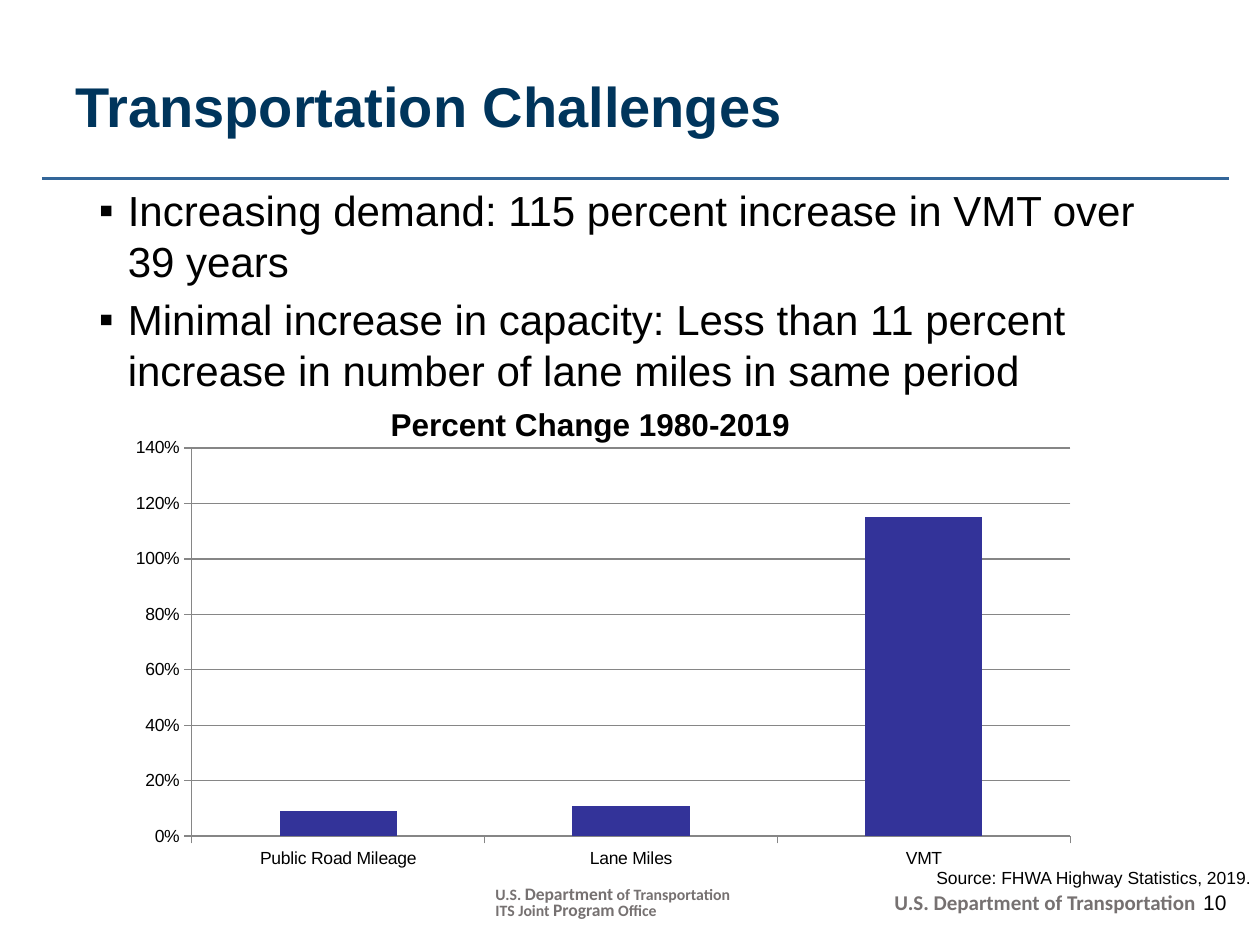
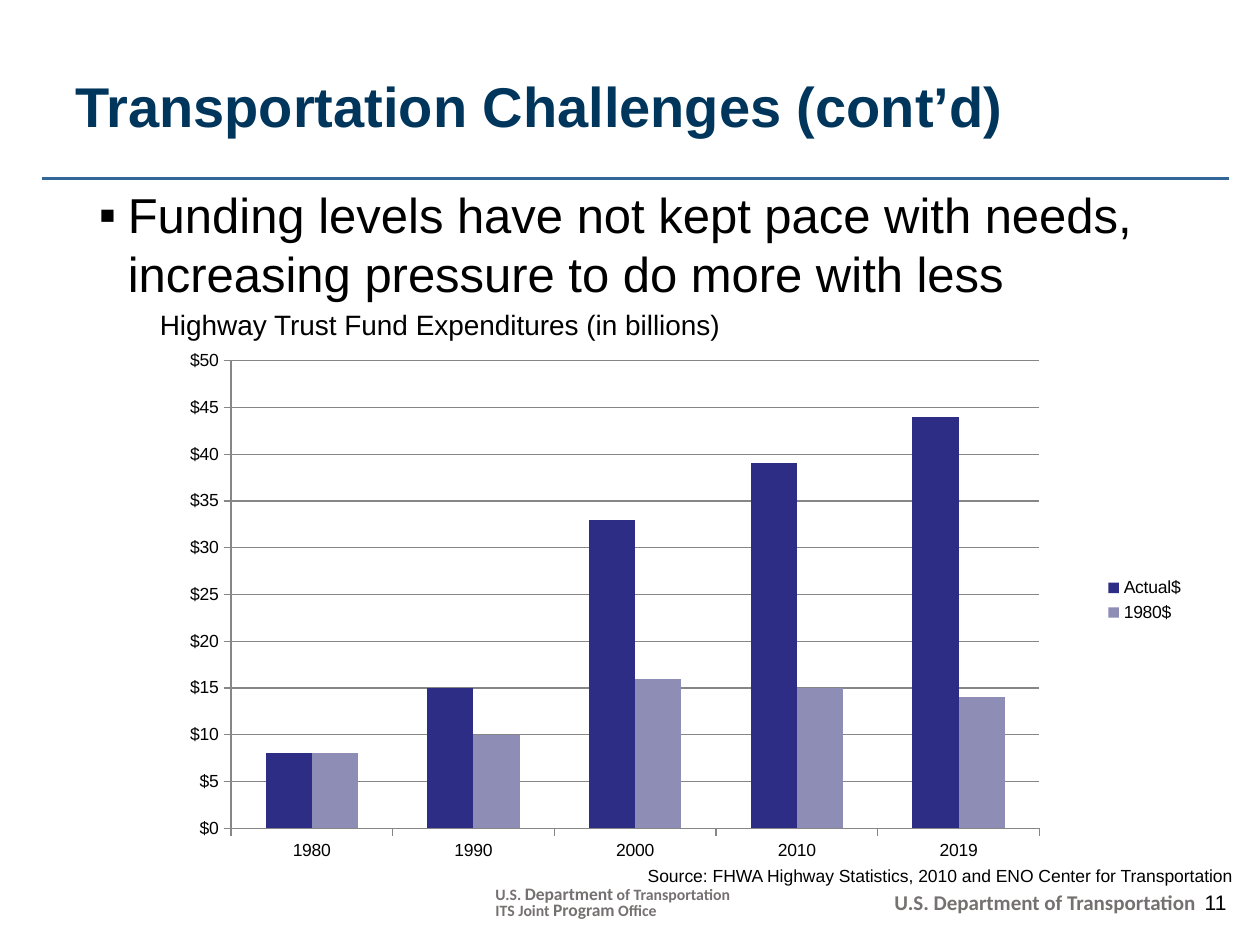
from lxml import etree
from pptx import Presentation
from pptx import util as u
from pptx.chart import data as chart_data
from pptx.dml.color import RGBColor
from pptx.enum import chart as ch, shapes, text
from pptx.oxml import parse_xml
from pptx.oxml.ns import nsdecls, qn

COLORS = {
    "title": "00355C", "rule": "336699", "footer": "767171", "ink": "000000",
    "paper": "FFFFFF", "grid": "868686",
    "demand": "333399", "actual": "2D2D86", "constant": "8D8DB6",
}
AGENCY = [("U.S. ", 9), ("Department", 10), (" of Transportation", 9)]
OFFICE = [("ITS Joint ", 9), ("Program", 10), (" Office", 9)]


def rgb(name):
    return RGBColor.from_string(COLORS[name])


def style(font, size, color="ink", bold=False, face="Arial"):
    font.name, font.size, font.bold = face, u.Pt(size), bold
    font.color.rgb = rgb(color)


def manual_layout(x, y, w=None, h=None):
    """Chart layout in fractions of the chart; with a size it places the inner plot."""
    places = [("xMode", "edge"), ("yMode", "edge"), ("x", x), ("y", y)]
    if w:
        places = [("layoutTarget", "inner")] + places + [("w", w), ("h", h)]
    layout = parse_xml(f"<c:layout {nsdecls('c')}><c:manualLayout/></c:layout>")
    for tag, value in places:
        etree.SubElement(layout[0], qn(f"c:{tag}")).set("val", str(value))
    return layout


class Deck:
    def __init__(self):
        self.prs = Presentation()
        self.prs.slide_width, self.prs.slide_height = u.Pt(720), u.Pt(540)
        self.slide = None

    def add_slide(self, title, number):
        self.slide = self.prs.slides.add_slide(self.prs.slide_layouts[6])
        self.slide.background.fill.solid()
        self.slide.background.fill.fore_color.rgb = rgb("paper")
        self.rule(24, 702, 102)
        self.label(str(number), (678, 505, 30, 21.6), 12, align=text.PP_ALIGN.RIGHT)
        self.footer((504, 510, 198, 17), [[("U.S. Department of Transportation", 12)]])
        self.footer((276, 504, 149, 26), [AGENCY, OFFICE])
        self.label(title, (36, 30, 648, 60), 32, "title", True, wrap=True,
                   anchor=text.MSO_ANCHOR.MIDDLE)

    def rule(self, left, right, y):
        line = self.slide.shapes.add_connector(
            shapes.MSO_CONNECTOR.STRAIGHT, u.Pt(left), u.Pt(y), u.Pt(right), u.Pt(y))
        line.line.color.rgb, line.line.width = rgb("rule"), u.Pt(1.5)
        etree.SubElement(line._element.spPr, qn("a:effectLst"))

    def frame(self, box, wrap=True):
        frame = self.slide.shapes.add_textbox(*map(u.Pt, box)).text_frame
        frame.word_wrap = wrap
        return frame

    def label(self, words, box, size, color="ink", bold=False, align=None,
              wrap=False, anchor=text.MSO_ANCHOR.TOP):
        frame = self.frame(box, wrap)
        frame.vertical_anchor = anchor
        line = frame.paragraphs[0]
        line.text = words
        line.alignment = align
        style(line.font, size, color, bold)

    def footer(self, box, lines):
        frame = self.frame(box)
        for i, pieces in enumerate(lines):
            line = frame.add_paragraph() if i else frame.paragraphs[0]
            line.line_spacing = u.Pt(9)
            style(line.font, pieces[0][1], "footer", True, "Calibri")
            for words, size in pieces:
                run = line.add_run()
                run.text = words
                style(run.font, size, "footer", True, "Calibri")

    def body(self, box, points, size, subpoint=None, subsize=16):
        frame = self.frame(box)
        entries = [(words, size, 30, True) for words in points]
        if subpoint:
            entries.append((subpoint, subsize, 64.8, False))
        for i, (words, pt, margin, bulleted) in enumerate(entries):
            line = frame.add_paragraph() if i else frame.paragraphs[0]
            line.text = words
            props = line._p.get_or_add_pPr()
            props.set("marL", str(u.Pt(margin)))
            props.set("indent", str(u.Pt(-16.5)))
            if i:
                line.space_before = u.Pt(pt * 0.2)
            if bulleted:
                etree.SubElement(props, qn("a:buFont")).set("typeface", "Arial")
                etree.SubElement(props, qn("a:buChar")).set("char", "▪")
            else:
                etree.SubElement(props, qn("a:buNone"))
            style(line.font, pt)

    def column_chart(self, box, categories, series, plot_area, number_format,
                     top, step, title=None, legend=False):
        """Draw clustered columns; series maps each name to (values, colour)."""
        data = chart_data.CategoryChartData(number_format=number_format)
        data.categories = categories
        for name, (values, _) in series.items():
            data.add_series(name, values)
        chart = self.slide.shapes.add_chart(
            ch.XL_CHART_TYPE.COLUMN_CLUSTERED, *map(u.Pt, box), data).chart
        style(chart.font, 10)
        plot = chart.plots[0]
        plot.gap_width, plot.overlap, plot.vary_by_categories = 150, 0, False
        for bars, (_, color) in zip(plot.series, series.values()):
            bars.format.fill.solid()
            bars.format.fill.fore_color.rgb = rgb(color)
        values = chart.value_axis
        values.minimum_scale, values.maximum_scale, values.major_unit = 0, top, step
        values.tick_labels.number_format = number_format
        values.tick_labels.number_format_is_linked = False
        values.has_major_gridlines = True
        for axis in (chart.category_axis, values):
            axis.major_tick_mark = ch.XL_TICK_MARK.OUTSIDE
            axis.format.line.color.rgb = rgb("grid")
        values.major_gridlines.format.line.color.rgb = rgb("grid")

        area = chart._chartSpace.chart.plotArea
        for old in area.findall(qn("c:layout")):
            area.remove(old)
        area.insert(0, manual_layout(*plot_area))

        chart.has_title = bool(title)
        if title:
            heading = chart.chart_title
            heading.text_frame.text = title
            style(heading.text_frame.paragraphs[0].font, 18, bold=True)
            for old in heading._element.findall(qn("c:layout")):
                heading._element.remove(old)
            heading._element.find(qn("c:tx")).addnext(manual_layout(0.29, 0.06))
        chart.has_legend = legend
        if legend:
            chart.legend.position = ch.XL_LEGEND_POSITION.RIGHT
            chart.legend.include_in_layout = False

    def source(self, words, box):
        self.label(f"Source: {words}", box, 10)


def main():
    deck = Deck()

    deck.add_slide("Transportation Challenges", 10)
    deck.body((36, 102, 648, 168), [
        "Increasing demand: 115 percent increase in VMT over 39 years",
        "Minimal increase in capacity: Less than 11 percent increase in number "
        "of lane miles in same period",
    ], 24)
    deck.source("FHWA Highway Statistics, 2019.", (528, 492, 210, 19.4))
    change = "Percent Change 1980-2019"
    deck.column_chart(
        (60, 210, 552, 288), ["Public Road Mileage", "Lane Miles", "VMT"],
        {change: ([0.09, 0.11, 1.15], "demand")},
        (0.09, 0.16, 0.91, 0.77), "0%", 1.4, 0.2, title=change)

    deck.add_slide("Transportation Challenges (cont’d)", 11)
    deck.body((36, 102, 654, 356), [
        "Funding levels have not kept pace with needs, increasing pressure "
        "to do more with less",
    ], 28, "Highway Trust Fund Expenditures (in billions)")
    deck.source("FHWA Highway Statistics, 2010 and ENO Center for Transportation",
                (363, 490.5, 372, 19.4))
    deck.column_chart(
        (84, 180, 600, 326), ["1980", "1990", "2000", "2010", "2019"],
        {"Actual$": ([8, 15, 33, 39, 44], "actual"),
         "1980$": ([8, 10, 16, 15, 14], "constant")},
        (0.08, 0.08, 0.77, 0.82), '"$"#,##0', 50, 5, legend=True)

    deck.prs.save("out.pptx")


if __name__ == "__main__":
    main()
